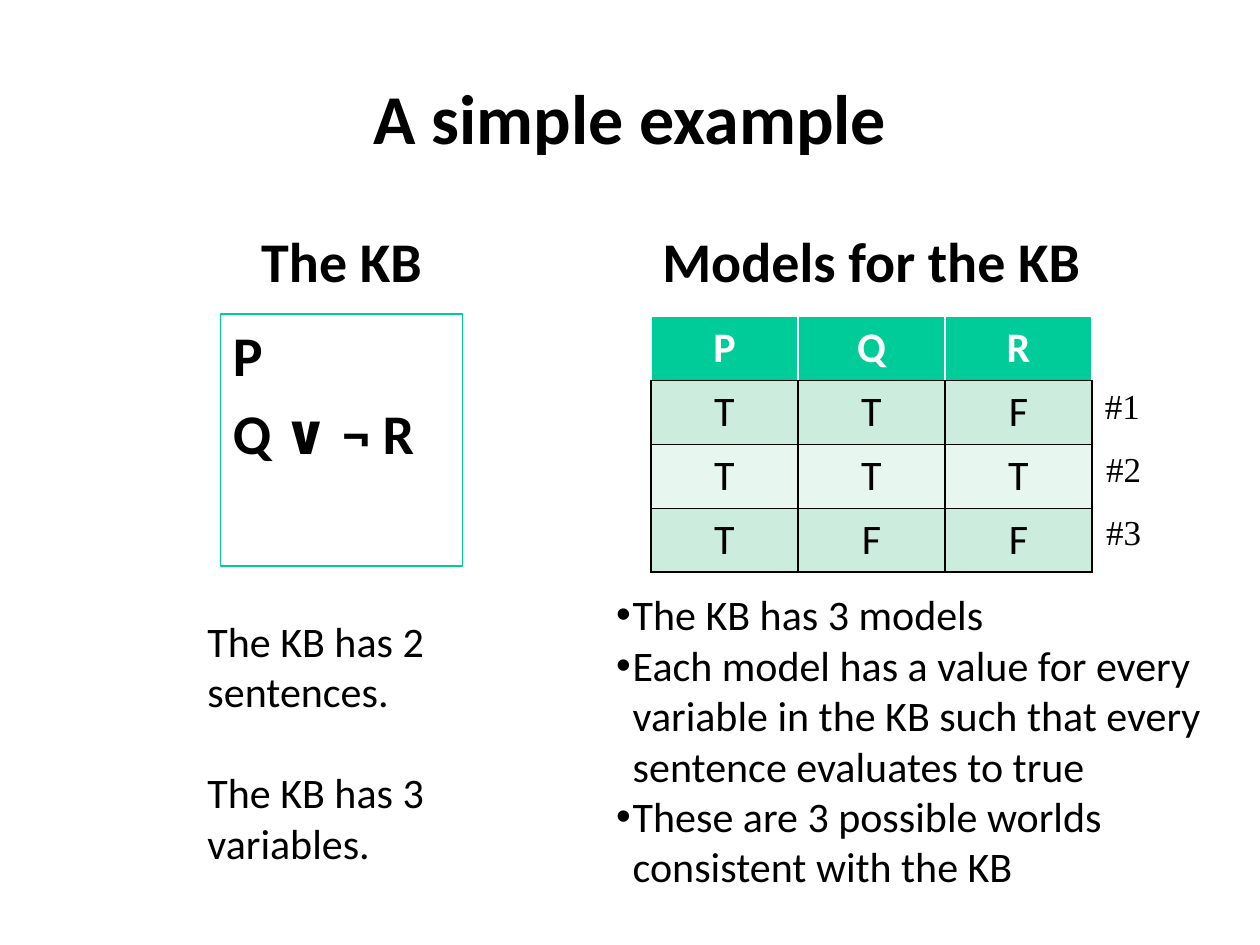
"""Build a slide on a small knowledge base and its models."""
from lxml import etree
from pptx import Presentation
from pptx.dml.color import RGBColor
from pptx.enum.shapes import MSO_SHAPE
from pptx.enum.text import MSO_ANCHOR, PP_ALIGN
from pptx.oxml.ns import qn
from pptx.util import Pt

LEFT, CENTER = PP_ALIGN.LEFT, PP_ALIGN.CENTER
TOP, MIDDLE, BOTTOM = MSO_ANCHOR.TOP, MSO_ANCHOR.MIDDLE, MSO_ANCHOR.BOTTOM
RECTANGLE = MSO_SHAPE.RECTANGLE
BLACK, WHITE, GREEN = "000000", "FFFFFF", "00CC99"
BANDS = ["CCECDE", "E7F6EF"]


def color(value):
    return RGBColor.from_string(value)


def write(frame, lines, size, bold=False, align=LEFT, name="Calibri", ink=BLACK, gap=0):
    for index, line in enumerate(lines):
        paragraph = frame.paragraphs[0] if index == 0 else frame.add_paragraph()
        paragraph.alignment = align
        paragraph.space_before = Pt(gap if index else 0)
        run = paragraph.add_run()
        run.text = line
        for key, value in {"size": Pt(size), "bold": bold, "name": name}.items():
            setattr(run.font, key, value)
        run.font.color.rgb = color(ink)


deck = Presentation()
deck.slide_width, deck.slide_height = Pt(720), Pt(540)
slide = deck.slides.add_slide(deck.slide_layouts[5])

title = slide.shapes.title
for key, value in {"left": 36, "top": 21.6, "width": 648, "height": 90}.items():
    setattr(title, key, Pt(value))
title.text_frame.vertical_anchor = MIDDLE
write(title.text_frame, ["A simple example"], 40, True, CENTER)

kb = slide.shapes.add_shape(RECTANGLE, Pt(126), Pt(179.5), Pt(138.5), Pt(144))
kb.shadow.inherit = False
kb.fill.background()
kb.line.color.rgb = color(GREEN)
kb.line.width = Pt(0.75)
kb.text_frame.vertical_anchor = TOP
write(kb.text_frame, ["P", "Q ∨ ¬ R"], 32, True, gap=6.4)

heading = {"size": 32, "bold": True, "align": CENTER}
label = {"size": 20, "name": "Times New Roman"}
bullets = [
    "The KB has 3 models",
    "Each model has a value for every variable in the KB such that every sentence evaluates to true",
    "These are 3 possible worlds consistent with the KB",
]
texts = [
    ((126, 121, 138.5, 50.5), ["The KB"], BOTTOM, True, heading),
    ((360, 121, 276, 50.5), ["Models for the KB"], BOTTOM, True, heading),
    ((111.5, 348, 166.5, 152.5), ["The KB has 2 sentences.", "The KB has 3 variables."],
     TOP, True, {"size": 24, "gap": 29}),
    ((624.25, 216, 34.5, 31.5), ["#1"], TOP, False, label),
    ((625, 252, 34.5, 31.5), ["#2"], TOP, False, label),
    ((625, 288, 34.5, 31.5), ["#3"], TOP, False, label),
    ((345, 333, 357, 181.5), bullets, TOP, True, {"size": 24}),
]
for place, lines, anchor, wrap, style in texts:
    frame = slide.shapes.add_textbox(*map(Pt, place)).text_frame
    frame.word_wrap = wrap
    frame.vertical_anchor = anchor
    write(frame, lines, **style)
    if lines is bullets:
        for paragraph in frame.paragraphs:
            properties = paragraph._p.get_or_add_pPr()
            properties.set("marL", str(Pt(9.5)))
            properties.set("indent", str(-Pt(9.5)))
            etree.SubElement(properties, qn("a:buFont")).set("typeface", "Arial")
            etree.SubElement(properties, qn("a:buChar")).set("char", "•")

models = ["PQR", "TTF", "TTT", "TFF"]
table = slide.shapes.add_table(4, 3, Pt(372), Pt(181), Pt(252), Pt(146)).table
for row, values in enumerate(models):
    for column, value in enumerate(values):
        cell = table.cell(row, column)
        header = row == 0
        write(cell.text_frame, [value], 24, header, CENTER, ink=WHITE if header else BLACK)
        properties = cell._tc.get_or_add_tcPr()
        for side in "LRTB":
            border = etree.SubElement(properties, qn(f"a:ln{side}"), w=str(Pt(1)))
            fill = etree.SubElement(border, qn("a:solidFill"))
            edge = WHITE if header and side != "B" else BLACK
            etree.SubElement(fill, qn("a:srgbClr"), val=edge)
        cell.fill.solid()
        cell.fill.fore_color.rgb = color(GREEN if header else BANDS[(row - 1) % 2])

deck.save("out.pptx")
